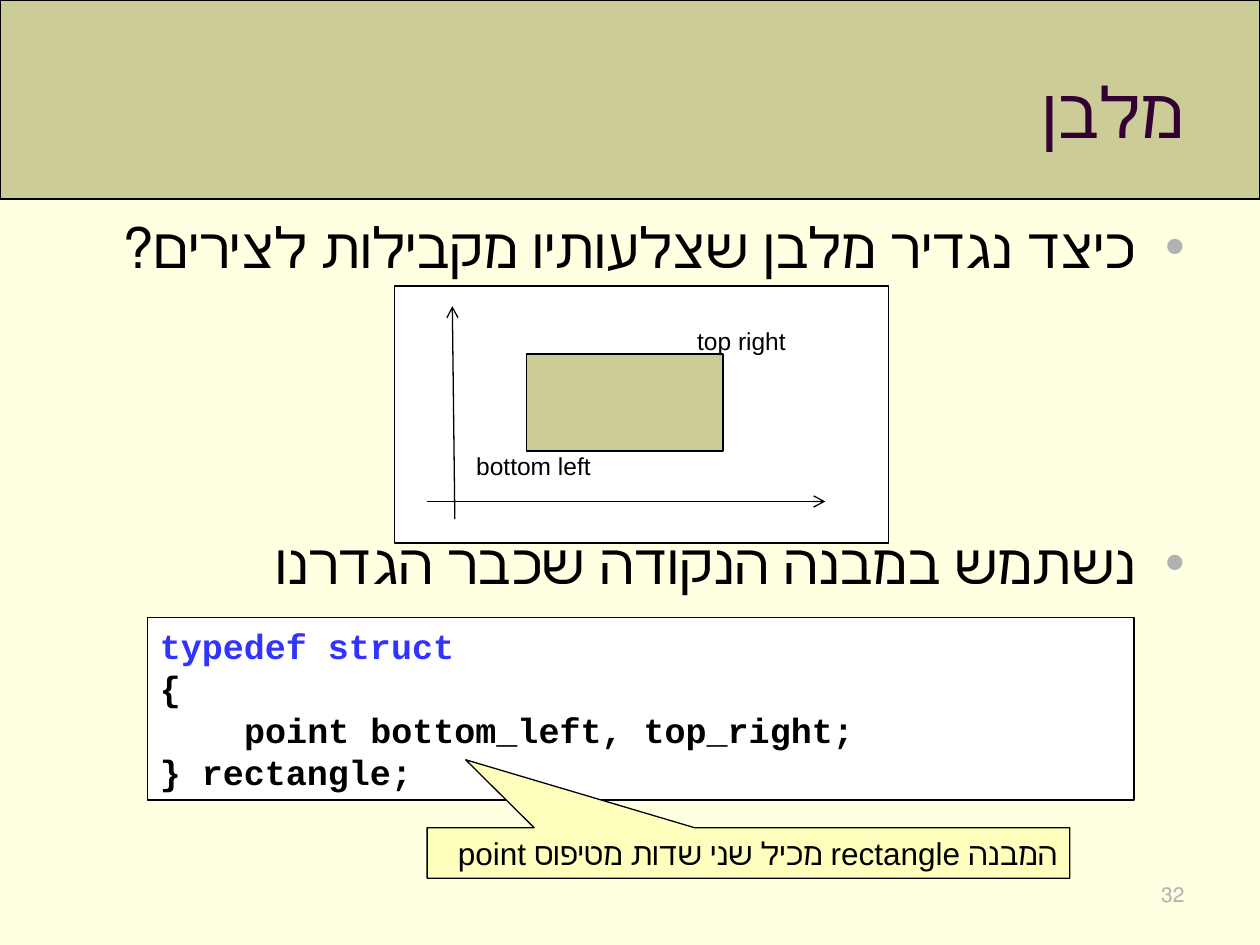
from lxml import etree
from pptx import Presentation
from pptx.dml.color import RGBColor
from pptx.enum.shapes import MSO_CONNECTOR as Connector, MSO_SHAPE as Preset
from pptx.enum.text import MSO_ANCHOR as Anchor, PP_ALIGN as Align
from pptx.oxml.ns import qn
from pptx.util import Inches, Pt

BLACK = RGBColor(0x00, 0x00, 0x00)
WHITE = RGBColor(0xFF, 0xFF, 0xFF)
CREAM = RGBColor(0xFF, 0xFF, 0xE1)
KHAKI = RGBColor(0xCC, 0xCC, 0x99)
PLUM = RGBColor(0x33, 0x00, 0x33)
GRAY = RGBColor(0xB2, 0xB2, 0xB2)
BLUE = RGBColor(0x33, 0x33, 0xFF)
YELLOW = RGBColor(0xFF, 0xFF, 0xBD)


def write(para, text, size, font="Arial", color=BLACK, bold=False,
          align=Align.LEFT, rtl=False, before=0):
    """Fill one paragraph with formatted text."""
    para.alignment = align
    para.space_before = Pt(before)
    if rtl:
        para._p.get_or_add_pPr().set("rtl", "1")
    span = para.add_run()
    span.text = text
    span.font.size = Pt(size)
    span.font.name = font
    span.font.bold = bold
    span.font.color.rgb = color


def add_bullet(para):
    """Give a paragraph a gray bullet with a hanging indent."""
    props = para._p.get_or_add_pPr()
    props.set("marL", str(Inches(0.38)))
    props.set("indent", str(-Inches(0.38)))
    color = etree.SubElement(props, qn("a:buClr"))
    etree.SubElement(color, qn("a:srgbClr"), val=str(GRAY))
    etree.SubElement(props, qn("a:buFont"), typeface="Arial")
    etree.SubElement(props, qn("a:buChar"), char="•")


def add_box(shapes, box, fill, preset=Preset.RECTANGLE):
    """Add a filled shape with a thin black outline."""
    shape = shapes.add_shape(preset, *map(Inches, box))
    shape.shadow.inherit = False
    shape.fill.solid()
    shape.fill.fore_color.rgb = fill
    shape.line.color.rgb = BLACK
    shape.line.width = Pt(0.75)
    return shape


def add_text_frame(shapes, box, wrap=True):
    frame = shapes.add_textbox(*map(Inches, box)).text_frame
    frame.word_wrap = wrap
    return frame


def add_axis(shapes, start, end):
    """Add a line with an open arrowhead at its end."""
    axis = shapes.add_connector(Connector.STRAIGHT, *map(Inches, start + end))
    axis.line.color.rgb = BLACK
    axis.line.width = Pt(0.75)
    etree.SubElement(axis.line._get_or_add_ln(), qn("a:tailEnd"), type="arrow")
    etree.SubElement(axis._element.spPr, qn("a:effectLst"))


def build_header(page, box):
    band = add_box(page.shapes, box, KHAKI)
    title = page.shapes.title
    title.element.addprevious(band.element)
    left, top, width, height = box
    title.left, title.top = Inches(left + 0.5), Inches(top + 0.25)
    title.width, title.height = Inches(width - 1), Inches(1.25)
    frame = title.text_frame
    frame.vertical_anchor = Anchor.MIDDLE
    write(frame.paragraphs[0], "מלבן", 40, font="Times New Roman",
          color=PLUM, align=Align.RIGHT, rtl=True)


def build_bullets(page, box):
    frame = add_text_frame(page.shapes, box)
    # The space before the second bullet leaves room for the diagram
    items = [("כיצד נגדיר מלבן שצלעותיו מקבילות לצירים?", 2),
             ("נשתמש במבנה הנקודה שכבר הגדרנו", 142)]
    for index, (text, before) in enumerate(items):
        para = frame.add_paragraph() if index else frame.paragraphs[0]
        write(para, text, 32, align=Align.RIGHT, rtl=True, before=before)
        add_bullet(para)


def build_diagram(page, box):
    left, top = box[:2]
    shapes = page.shapes.add_group_shape().shapes
    add_box(shapes, box, WHITE)
    # Axes
    add_axis(shapes, (left + 0.48, top + 1.85), (left + 0.46, top + 0.16))
    add_axis(shapes, (left + 0.26, top + 1.71), (left + 3.42, top + 1.71))
    # Rectangle and the names of its corners
    add_box(shapes, (left + 1.05, top + 0.54, 1.56, 0.77), KHAKI)
    for text, x, y, width in [("bottom left", 0.53, 1.26, 1.15),
                              ("top right", 2.25, 0.27, 1.01)]:
        frame = add_text_frame(shapes, (left + x, top + y, width, 0.34), wrap=False)
        write(frame.paragraphs[0], text, 14, align=Align.CENTER)


def build_code(page, box):
    frame = add_box(page.shapes, box, WHITE).text_frame
    frame.word_wrap = True
    lines = [("typedef struct", BLUE, 0), ("{", BLACK, 0),
             ("point bottom_left, top_right;", BLACK, 0.67),
             ("} rectangle;", BLACK, 0)]
    for index, (text, color, indent) in enumerate(lines):
        para = frame.add_paragraph() if index else frame.paragraphs[0]
        write(para, text, 20, font="Courier New", color=color, bold=True)
        para.line_spacing = Pt(24)
        para._p.get_or_add_pPr().set("marL", str(Inches(indent)))


def build_callout(page, box):
    callout = add_box(page.shapes, box, YELLOW, Preset.RECTANGULAR_CALLOUT)
    callout.adjustments[0] = -0.44
    callout.adjustments[1] = -1.85
    callout.text_frame.word_wrap = True
    write(callout.text_frame.paragraphs[0],
          "המבנה rectangle מכיל שני שדות מטיפוס point", 18,
          align=Align.RIGHT, rtl=True)


def build_page_number(page, box):
    frame = add_text_frame(page.shapes, box)
    write(frame.paragraphs[0], "32", 12, color=GRAY, align=Align.RIGHT, rtl=True)


def main():
    deck = Presentation()
    deck.slide_width, deck.slide_height = Inches(10), Inches(7.5)
    page = deck.slides.add_slide(deck.slide_layouts[5])
    page.background.fill.solid()
    page.background.fill.fore_color.rgb = CREAM
    build_header(page, (0, 0, 10, 1.58))
    build_bullets(page, (0.5, 1.64, 9, 5.33))
    build_diagram(page, (3.13, 2.27, 3.92, 2.04))
    build_code(page, (1.17, 4.9, 7.83, 1.45))
    build_page_number(page, (7.17, 6.95, 2.33, 0.4))
    build_callout(page, (3.39, 6.57, 5.1, 0.4))
    deck.save("out.pptx")


if __name__ == "__main__":
    main()
